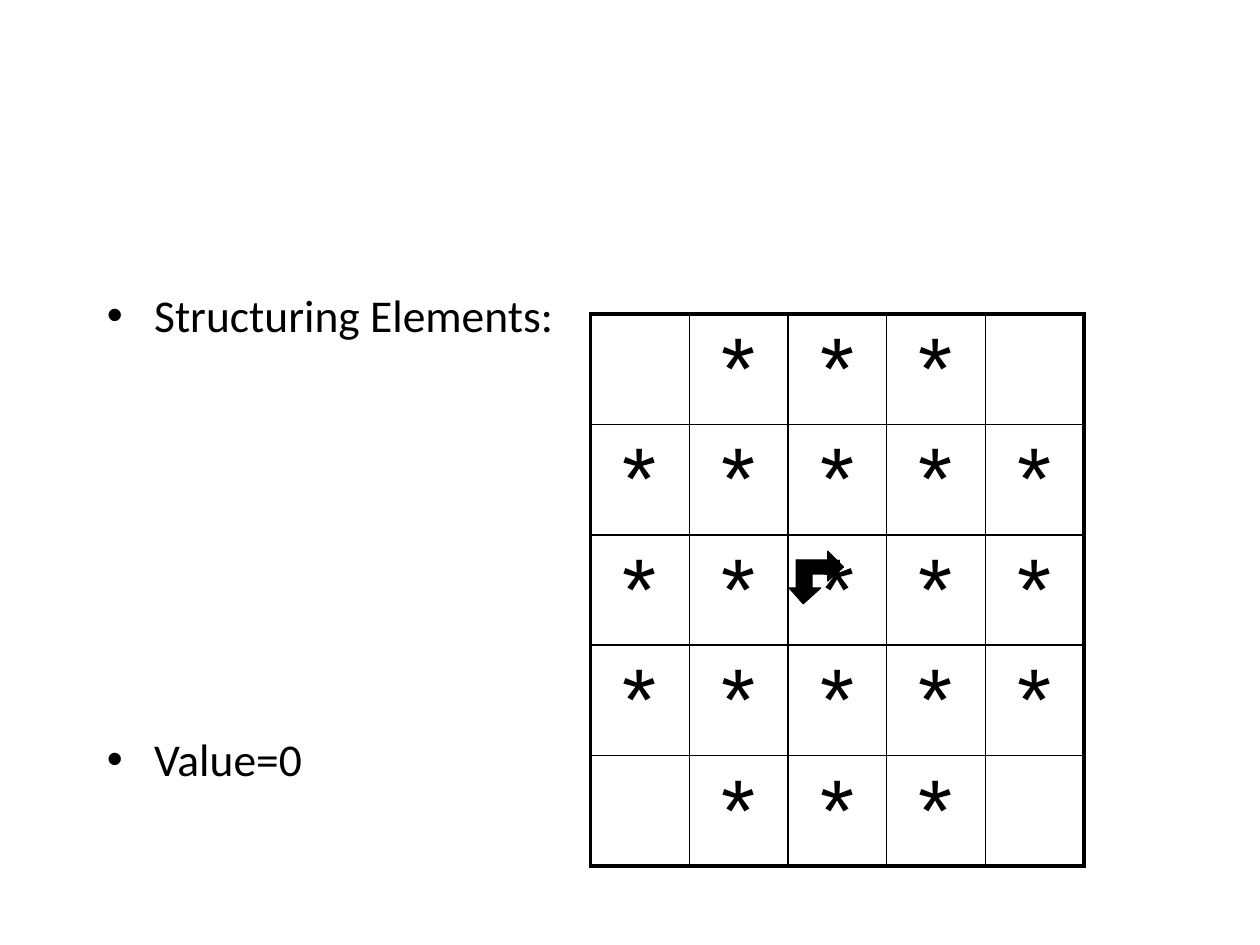
from lxml import etree
from pptx import Presentation
from pptx.dml.color import RGBColor
from pptx.enum.text import MSO_ANCHOR, PP_ALIGN
from pptx.oxml.ns import qn
from pptx.util import Pt

MIDDLE = MSO_ANCHOR.MIDDLE
CENTER = PP_ALIGN.CENTER

# Content
BULLETS = [("Structuring Elements:", 0), ("Value=0", 222.6)]  # text, space before
GRID = [" *** ", "*****", "*****", "*****", " *** "]
ARROW_POINTS = [
    (459.4, 344.9), (468.7, 336.2), (464.4, 336.2), (464.4, 327.6),
    (473, 327.6), (473, 331.9), (481.7, 324), (473, 315.4),
    (473, 319.7), (455, 319.7), (455, 336.2), (450.7, 336.2),
]

THEME = {
    "ink": RGBColor(0, 0, 0),
    "bullet": {"name": "Calibri", "size": Pt(26)},
    "star": {"name": "Arial", "size": Pt(50)},
    "outer": 2.25,
    "inner": 1,
}
BODY = (54, 160.6, 318, 347)
TABLE_LEFT, TABLE_TOP, COLUMN, ROW = 337.5, 179.4, 56.4, 63.1
INDENT = 27


def style(font, values):
    for name, value in values.items():
        setattr(font, name, value)
    font.color.rgb = THEME["ink"]


def add_border(cell, side, width):
    line = etree.SubElement(cell._tc.get_or_add_tcPr(), qn("a:" + side),
                            w=str(Pt(width)))
    fill = etree.SubElement(line, qn("a:solidFill"))
    etree.SubElement(fill, qn("a:srgbClr"), val=str(THEME["ink"]))


def add_bullets(page):
    box = page.shapes.add_textbox(*map(Pt, BODY))
    frame = box.text_frame
    frame.word_wrap = True
    for index, (text, space) in enumerate(BULLETS):
        para = frame.paragraphs[0] if index == 0 else frame.add_paragraph()
        para.space_before = Pt(space)
        props = para._p.get_or_add_pPr()
        props.set("marL", str(Pt(INDENT)))
        props.set("indent", str(Pt(-INDENT)))
        etree.SubElement(props, qn("a:buFont"), typeface="Arial")
        etree.SubElement(props, qn("a:buChar"), char="•")
        span = para.add_run()
        span.text = text
        style(span.font, THEME["bullet"])


def add_grid(page):
    rows, columns = len(GRID), len(GRID[0])
    table = page.shapes.add_table(
        rows, columns, Pt(TABLE_LEFT), Pt(TABLE_TOP),
        Pt(COLUMN * columns), Pt(ROW * rows)).table
    table.first_row = table.horz_banding = False
    for column in table.columns:
        column.width = Pt(COLUMN)
    for row in table.rows:
        row.height = Pt(ROW)
    for r, marks in enumerate(GRID):
        for c, mark in enumerate(marks):
            cell = table.cell(r, c)
            cell.vertical_anchor = MIDDLE
            cell.margin_top = cell.margin_bottom = 0
            edges = {"lnL": c == 0, "lnR": c == columns - 1,
                     "lnT": r == 0, "lnB": r == rows - 1}
            for side, is_outer in edges.items():
                add_border(cell, side, THEME["outer" if is_outer else "inner"])
            cell.fill.background()
            if mark.strip():
                para = cell.text_frame.paragraphs[0]
                para.alignment = CENTER
                span = para.add_run()
                span.text = mark
                style(span.font, THEME["star"])


def add_origin_arrow(page):
    start, *others = ARROW_POINTS
    builder = page.shapes.build_freeform(*start, scale=Pt(1))
    builder.add_line_segments(others, close=True)
    arrow = builder.convert_to_shape()
    arrow.shadow.inherit = False
    arrow.fill.solid()
    arrow.fill.fore_color.rgb = THEME["ink"]
    arrow.line.color.rgb = THEME["ink"]
    arrow.line.width = Pt(0.75)


def main():
    deck = Presentation()
    deck.slide_width, deck.slide_height = Pt(720), Pt(540)
    page = deck.slides.add_slide(deck.slide_layouts[6])
    add_bullets(page)
    add_grid(page)
    add_origin_arrow(page)
    deck.save("out.pptx")


if __name__ == "__main__":
    main()
